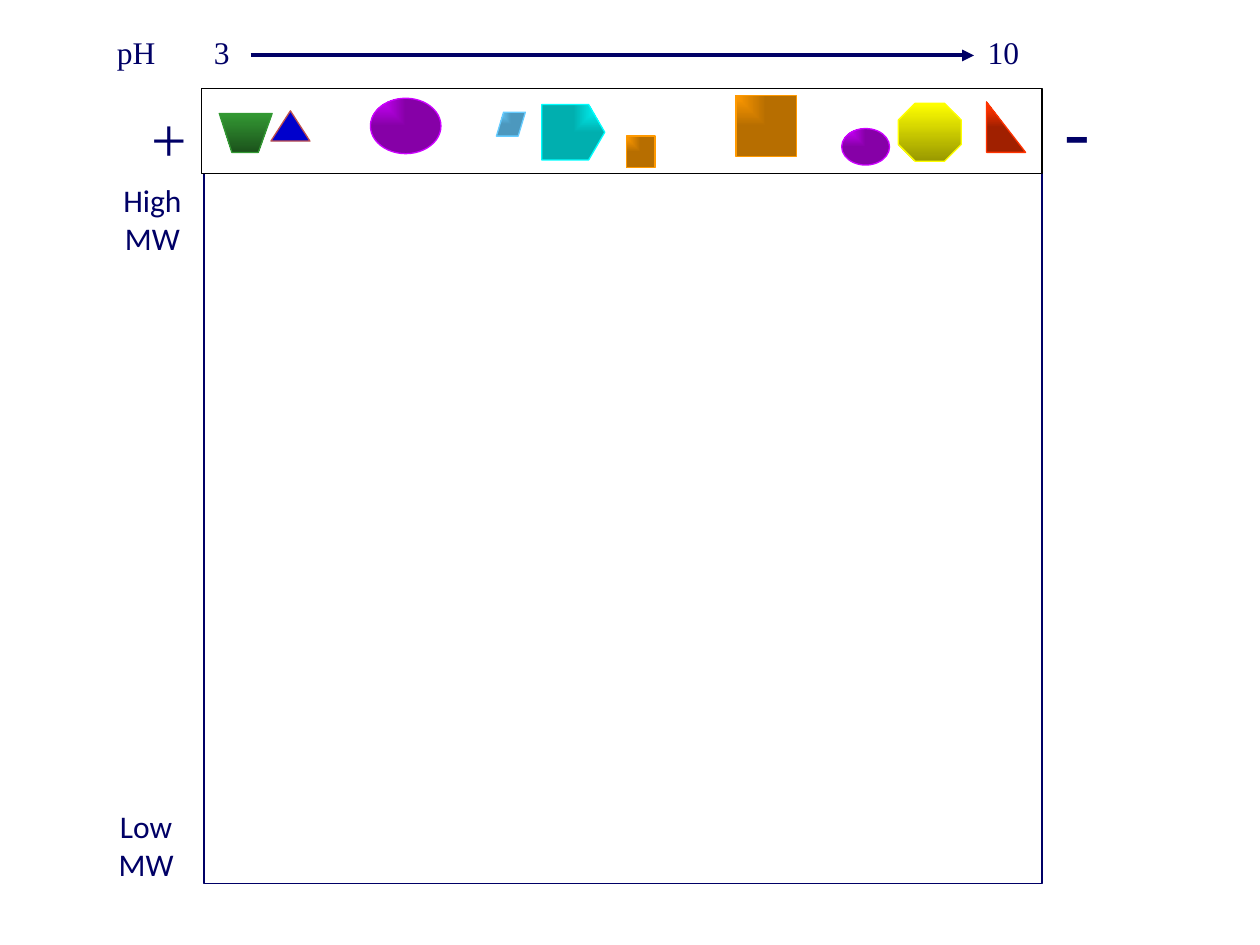
from lxml import etree
from pptx import Presentation, util as u
from pptx.dml.color import RGBColor
from pptx.enum import shapes as s, text as t
from pptx.oxml.ns import qn

PX = 9144  # EMU per px, 100 px to the inch
THEME = {
    "ink": "000066", "paper": "FFFFFF", "strip": "000000",
    "triangle": "0000CC", "triangle_edge": "C0504D",
    "orange": ("FF9900", "B76E00"), "green": ("339933", "1B521B"),
    "red": ("FF3300", "A02000"), "sky": ("66CCFF", "4C98BE"),
    "cyan": ("00FFFF", "00AFAF"), "purple": ("CC00FF", "8600A7"),
    "yellow": ("FFFF00", "989800"),
    "serif": "Times New Roman", "sans": "Calibri",
    "label": 18, "plus": 36, "minus": 44, "thin": 0.75, "thick": 2.25,
}
# Focus of each corner gradient: left, top, right, bottom insets in percent
CORNERS = {"top left": (0, 0, 100, 100), "top right": (100, 0, 0, 100)}


def rgb(name):
    return RGBColor.from_string(name)


def paint(shape, fill, edge, shade=None):
    """Give a shape its outline and a solid, downward or corner-lit fill."""
    shape.shadow.inherit = False
    shape.line.color.rgb = rgb(edge)
    shape.line.width = u.Pt(THEME["thin"])
    if shade is None:
        shape.fill.solid()
        shape.fill.fore_color.rgb = rgb(fill)
        return
    shape.fill.gradient()
    for stop, colour in zip(shape.fill.gradient_stops, fill):
        stop.color.rgb = rgb(colour)
    shape.fill.gradient_angle = 270
    if shade in CORNERS:
        grad = shape._element.spPr.find(qn("a:gradFill"))
        grad.remove(grad.find(qn("a:lin")))
        focus = etree.SubElement(grad, qn("a:path"), path="rect")
        insets = {side: str(pct * 1000) for side, pct in zip("ltrb", CORNERS[shade])}
        etree.SubElement(focus, qn("a:fillToRect"), insets)


prs = Presentation()
prs.slide_width, prs.slide_height = 1000 * PX, 750 * PX
slide = prs.slides.add_slide(prs.slide_layouts[6])
canvas = slide.shapes
KIND = s.MSO_SHAPE

# Gel slab with the focusing strip across its top
for box, edge in [((162, 133, 665, 568), "ink"), ((160, 70, 667, 68), "strip")]:
    panel = canvas.add_shape(KIND.RECTANGLE, *(n * PX for n in box))
    paint(panel, THEME["paper"], THEME[edge])

# pH gradient arrow
ph_arrow = canvas.add_connector(
    s.MSO_CONNECTOR.STRAIGHT, 199 * PX, 44 * PX, 773 * PX, 44 * PX)
ph_arrow.line.color.rgb = rgb(THEME["ink"])
ph_arrow.line.width = u.Pt(THEME["thick"])
etree.SubElement(ph_arrow.line._get_or_add_ln(), qn("a:tailEnd"), type="triangle")
etree.SubElement(ph_arrow._element.spPr, qn("a:effectLst"))

# Proteins separated along the strip
trapezoid = canvas.build_freeform(174, 90, scale=PX)
trapezoid.add_line_segments([(184, 121), (205, 121), (216, 90)], close=True)
paint(trapezoid.convert_to_shape(), THEME["green"], THEME["green"][0], "down")

triangle = canvas.add_shape(
    KIND.ISOSCELES_TRIANGLE, 215 * PX, 88 * PX, 31 * PX, 24 * PX)
paint(triangle, THEME["triangle"], THEME["triangle_edge"])

proteins = [
    (KIND.RECTANGLE, (584, 76, 48, 48), "orange", "top left", None),
    (KIND.RIGHT_TRIANGLE, (783, 81, 31, 40), "red", "top left", None),
    (KIND.PARALLELOGRAM, (394, 89, 23, 19), "sky", "top left", 0.3),
    (KIND.PENTAGON, (430, 83, 50, 44), "cyan", "top right", 0.29),
    (KIND.OVAL, (294, 78, 56, 44), "purple", "top left", None),
    (KIND.OVAL, (668, 102, 38, 29), "purple", "top left", None),
    (KIND.OCTAGON, (713, 82, 50, 46), "yellow", "down", 0.29),
    (KIND.RECTANGLE, (497, 108, 23, 25), "orange", "top left", None),
]
for kind, box, colours, shade, adjust in proteins:
    protein = canvas.add_shape(kind, *(n * PX for n in box))
    if adjust is not None:
        protein.adjustments[0] = adjust
    paint(protein, THEME[colours], THEME[colours][0], shade)

# pH scale, electrode signs and molecular weight labels
LEFT, CENTER = t.PP_ALIGN.LEFT, t.PP_ALIGN.CENTER
labels = [
    (["3"], (160, 21, 37, 50), "label", "serif", LEFT),
    (["pH"], (83, 21, 65, 50), "label", "serif", LEFT),
    (["10"], (774, 21, 53, 50), "label", "serif", LEFT),
    (["-"], (835, 60, 40, 83), "minus", "serif", LEFT),
    (["+"], (110, 74, 49, 70), "plus", "serif", LEFT),
    (["High", "MW"], (83, 139, 76, 70), "label", "sans", CENTER),
    (["Low", "MW"], (81, 636, 70, 70), "label", "sans", CENTER),
]
for lines, box, size, face, align in labels:
    frame = canvas.add_textbox(*(n * PX for n in box)).text_frame
    frame.word_wrap = False
    frame.auto_size = t.MSO_AUTO_SIZE.SHAPE_TO_FIT_TEXT
    frame.text = "\n".join(lines)
    for paragraph in frame.paragraphs:
        paragraph.alignment = align
        font = paragraph.runs[0].font
        font.color.rgb = rgb(THEME["ink"])
        for key, value in {"name": THEME[face], "size": u.Pt(THEME[size])}.items():
            setattr(font, key, value)

prs.save("out.pptx")
